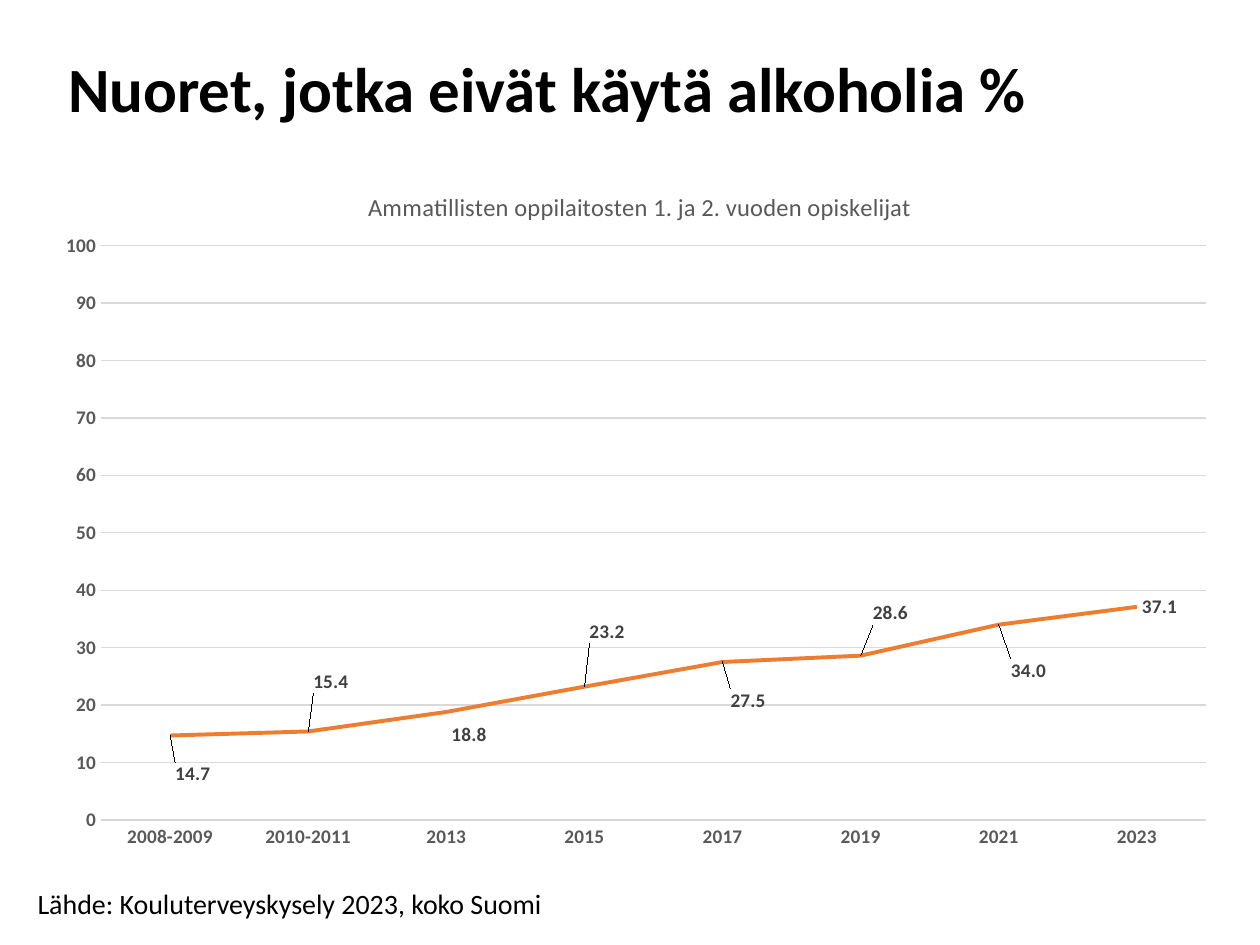
from lxml import etree
from pptx import Presentation
from pptx import util as u
from pptx.chart.data import CategoryChartData
from pptx.dml.color import RGBColor
from pptx.enum import chart as charts, text
from pptx.oxml.ns import qn

TITLE = "Nuoret, jotka eivät käytä alkoholia %"
SOURCE = "Lähde: Kouluterveyskysely 2023, koko Suomi"
CHART_TITLE = "Ammatillisten oppilaitosten 1. ja 2. vuoden opiskelijat"
SHARES = {
    "2008-2009": 14.7, "2010-2011": 15.4, "2013": 18.8, "2015": 23.2,
    "2017": 27.5, "2019": 28.6, "2021": 34.0, "2023": 37.1,
}
LABEL_SHIFTS = [(0, 5.5), (0, -7), (0, 3.3), (0, -7.8), (0.25, 5.5), (0.6, -6), (0.6, 6.5)]

FONT = "Calibri"
BLACK = RGBColor(0, 0, 0)
GRAY = RGBColor(0x59, 0x59, 0x59)
DARK = RGBColor(0x40, 0x40, 0x40)
PALE = RGBColor(0xD9, 0xD9, 0xD9)
ORANGE = RGBColor(0xED, 0x7D, 0x31)


def style(font, size, color, bold=False):
    font.name, font.size, font.bold = FONT, u.Pt(size), bold
    font.color.rgb = color


def write(frame, words, size, bold=False, anchor=text.MSO_ANCHOR.TOP, spacing=1):
    frame.vertical_anchor = anchor
    para = frame.paragraphs[0]
    para.alignment, para.line_spacing = text.PP_ALIGN.LEFT, spacing
    span = para.add_run()
    span.text = words
    style(span.font, size, BLACK, bold)


def place(box, *inches):
    box.left, box.top, box.width, box.height = map(u.Inches, inches)


def manual_layout(**values):
    layout = etree.Element(qn("c:layout"))
    manual = etree.SubElement(layout, qn("c:manualLayout"))
    for name, value in values.items():
        etree.SubElement(manual, qn("c:" + name)).set("val", str(value))
    return layout


def style_axis(axis):
    axis.major_tick_mark = axis.minor_tick_mark = charts.XL_TICK_MARK.NONE
    style(axis.tick_labels.font, 11, GRAY, True)


def style_labels(labels):
    style(labels.font, 11, DARK, True)
    labels.position = charts.XL_LABEL_POSITION.RIGHT


def add_line_chart(page):
    data = CategoryChartData(number_format="#,##0.0")
    data.categories = list(SHARES)
    data.add_series("Series 1", list(SHARES.values()))
    frame = page.shapes.add_chart(
        charts.XL_CHART_TYPE.LINE, *map(u.Inches, (0.34, 1.25, 9.43, 5.6)), data)
    chart = frame.chart
    style(chart.font, 10, BLACK)
    chart.has_legend = False

    heading = chart.chart_title
    heading.text_frame.text = CHART_TITLE
    style(heading.text_frame.paragraphs[0].runs[0].font, 14, GRAY)
    heading.include_in_layout = False
    title = chart._chartSpace.chart.find(qn("c:title"))
    for old in title.findall(qn("c:layout")):
        title.remove(old)
    title.find(qn("c:tx")).addnext(
        manual_layout(xMode="edge", yMode="edge", x=0.27, y=0.04))

    plot_area = chart._chartSpace.chart.plotArea
    for old in plot_area.findall(qn("c:layout")):
        plot_area.remove(old)
    plot_area.insert(0, manual_layout(
        layoutTarget="inner", xMode="edge", yMode="edge",
        x=0.049, y=0.125, w=0.93, h=0.814))

    years, percents = chart.category_axis, chart.value_axis
    style_axis(years)
    style_axis(percents)
    percents.minimum_scale, percents.maximum_scale, percents.major_unit = 0, 100, 10
    percents.tick_labels.number_format = "0"
    percents.tick_labels.number_format_is_linked = False
    percents.format.line.fill.background()
    for line in (years.format.line, percents.major_gridlines.format.line):
        line.color.rgb, line.width = PALE, u.Pt(0.75)

    series = chart.plots[0].series[0]
    series.smooth = False
    series.marker.style = charts.XL_MARKER_STYLE.NONE
    series.format.line.color.rgb, series.format.line.width = ORANGE, u.Pt(2.25)
    labels = series.data_labels
    labels.show_value = True
    labels.number_format, labels.number_format_is_linked = "#,##0.0", False
    style_labels(labels)
    for index, (x, y) in enumerate(LABEL_SHIFTS):
        style_labels(series.points[index].data_label)
    for label, (x, y) in zip(labels._element.findall(qn("c:dLbl")), LABEL_SHIFTS):
        label.find(qn("c:idx")).addnext(manual_layout(x=x / 100, y=y / 100))


def main():
    deck = Presentation()
    deck.slide_width, deck.slide_height = u.Inches(10), u.Inches(7.5)
    page = deck.slides.add_slide(deck.slide_layouts[5])
    title = page.shapes.title
    place(title, 0.44, 0.23, 9.13, 1.01)
    write(title.text_frame, TITLE, 36, True, text.MSO_ANCHOR.MIDDLE, 0.9)
    add_line_chart(page)
    source = page.shapes.add_textbox(*map(u.Inches, (0.2, 6.99, 4.37, 0.37)))
    source.text_frame.auto_size = text.MSO_AUTO_SIZE.SHAPE_TO_FIT_TEXT
    source.text_frame.word_wrap = False
    write(source.text_frame, SOURCE, 16)
    deck.save("out.pptx")


if __name__ == "__main__":
    main()
